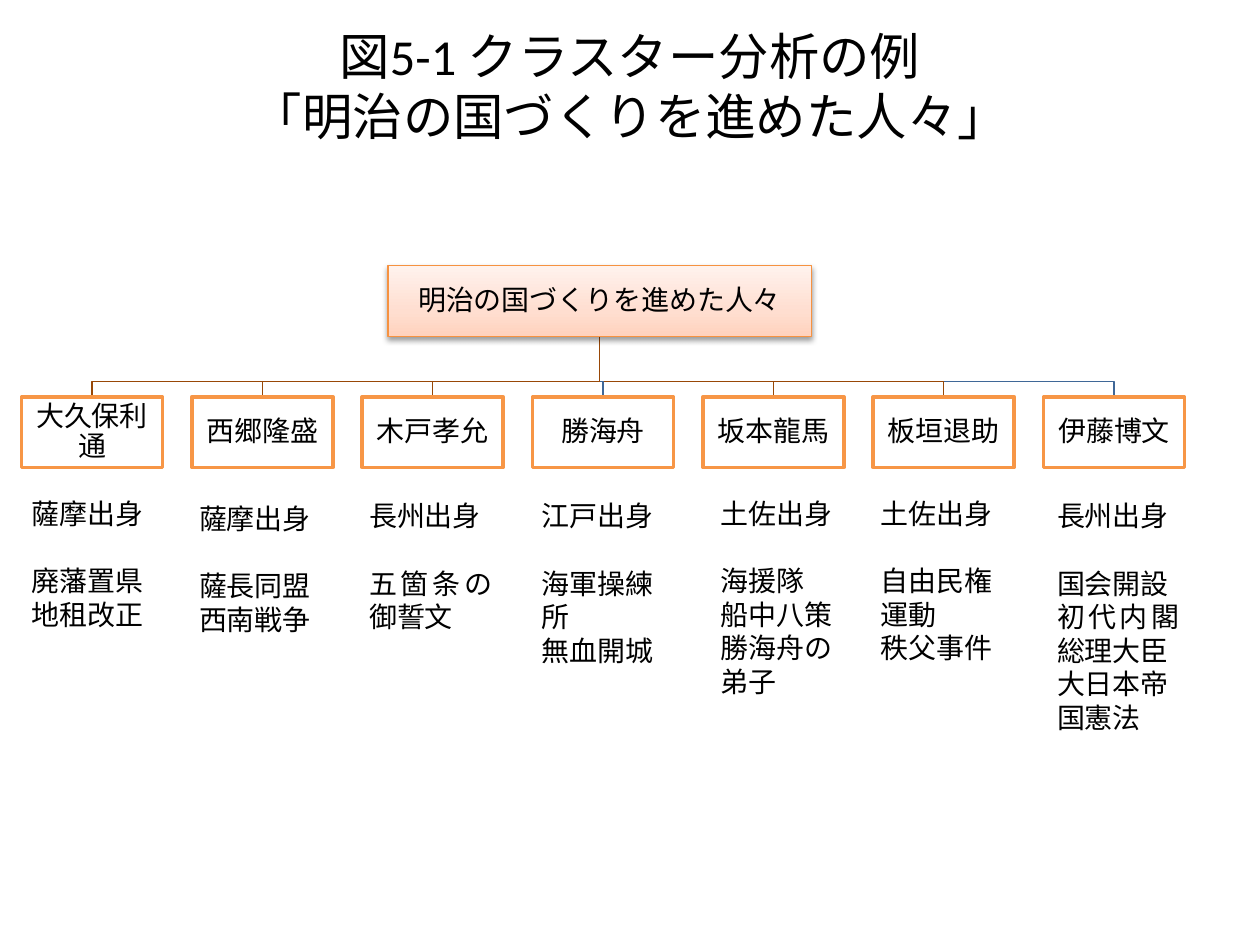
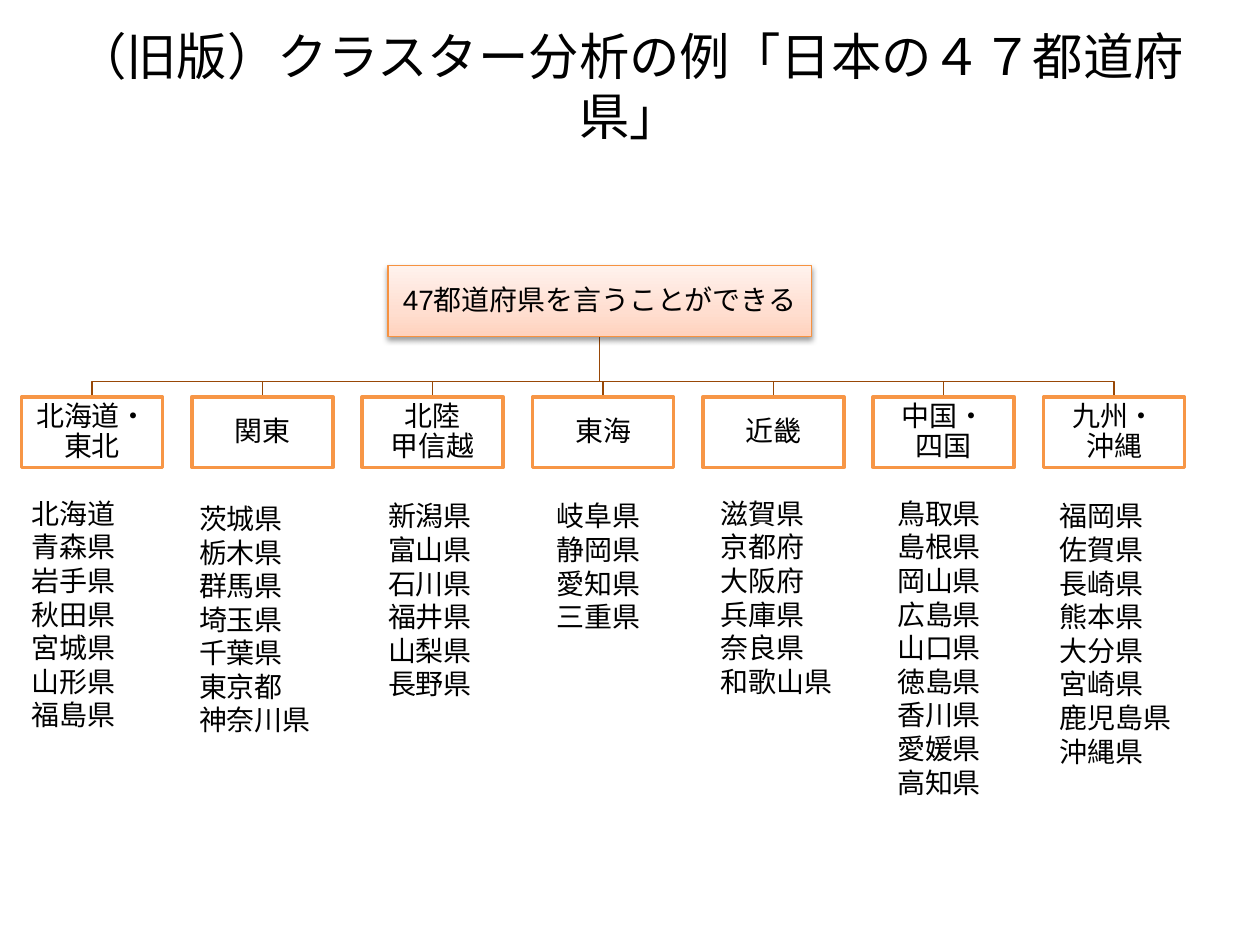
"""Build two cluster-analysis slides, each a root box over seven branches with details."""
import copy

import lxml.etree
import pptx
import pptx.dml.color
import pptx.enum.shapes
import pptx.enum.text
import pptx.oxml.ns
import pptx.util

Inches = pptx.util.Inches
Pt = pptx.util.Pt
RGBColor = pptx.dml.color.RGBColor
ALIGN = pptx.enum.text.PP_ALIGN
ANCHOR = pptx.enum.text.MSO_ANCHOR
RECTANGLE = pptx.enum.shapes.MSO_SHAPE.RECTANGLE
qn = pptx.oxml.ns.qn

BLACK = RGBColor(0x00, 0x00, 0x00)
WHITE = RGBColor(0xFF, 0xFF, 0xFF)
ORANGE = RGBColor(0xF7, 0x96, 0x46)
ROOT_BORDER = RGBColor(0xF6, 0x92, 0x40)
BROWN = RGBColor(0x98, 0x48, 0x07)
BLUE = RGBColor(0x3F, 0x67, 0x97)
ROOT_GRADIENT = [
    (0, RGBColor(0xFF, 0xD2, 0xBD)),
    (0.35, RGBColor(0xFF, 0xDE, 0xD0)),
    (1, RGBColor(0xFF, 0xF2, 0xED)),
]

BRANCH_LEFT, BRANCH_STEP, BRANCH_TOP, BRANCH_WIDTH = 0.17, 1.352, 3.15, 1.12
ROOT_LEFT, ROOT_TOP, ROOT_WIDTH = 3.08, 2.11, 3.36
BOX_HEIGHT = 0.56
TRUNK_X, FORK_Y = ROOT_LEFT + ROOT_WIDTH / 2, 3.03
DETAIL_TOPS = [3.93, 3.97, 3.95, 3.95, 3.93, 3.93, 3.95]
DETAIL_HEIGHT = 2.29
LEFT_ALIGNED = {"江戸出身", "海軍操練所", "無血開城", "勝海舟の弟子", "自由民権運動", "大日本帝国憲法"}

SLIDES = [
    {
        "title": "図5-1 クラスター分析の例\v「明治の国づくりを進めた人々」",
        "root": "明治の国づくりを進めた人々",
        "gap_after_first": 19.2,
        "blue_branches": {3, 6},
        "branches": [
            ("大久保利通", 0.17, 1.08, "薩摩出身 廃藩置県 地租改正"),
            ("西郷隆盛", 1.5, 1.12, "薩摩出身 薩長同盟 西南戦争"),
            ("木戸孝允", 2.85, 1.14, "長州出身 五箇条の御誓文"),
            ("勝海舟", 4.22, 1.08, "江戸出身 海軍操練所 無血開城"),
            ("坂本龍馬", 5.64, 1.19, "土佐出身 海援隊 船中八策 勝海舟の弟子"),
            ("板垣退助", 6.91, 1.15, "土佐出身 自由民権運動 秩父事件"),
            ("伊藤博文", 8.31, 1.13, "長州出身 国会開設 初代内閣総理大臣 大日本帝国憲法"),
        ],
    },
    {
        "title": "（旧版）クラスター分析の例「日本の４７都道府県」",
        "root": "47都道府県を言うことができる",
        "gap_after_first": 0,
        "blue_branches": set(),
        "branches": [
            ("北海道・\v東北", 0.17, 1.08, "北海道 青森県 岩手県 秋田県 宮城県 山形県 福島県"),
            ("関東", 1.5, 1.12, "茨城県 栃木県 群馬県 埼玉県 千葉県 東京都 神奈川県"),
            ("北陸\v甲信越", 3, 0.95, "新潟県 富山県 石川県 福井県 山梨県 長野県"),
            ("東海", 4.34, 0.95, "岐阜県 静岡県 愛知県 三重県"),
            ("近畿", 5.64, 1.19, "滋賀県 京都府 大阪府 兵庫県 奈良県 和歌山県"),
            ("中国・\v四国", 7.04, 0.95, "鳥取県 島根県 岡山県 広島県 山口県 徳島県 香川県 愛媛県 高知県"),
            ("九州・\v沖縄", 8.33, 1.13, "福岡県 佐賀県 長崎県 熊本県 大分県 宮崎県 鹿児島県 沖縄県"),
        ],
    },
]


def write_lines(shape, lines, alignment, anchor, margins, font_name="Arial", size=16):
    """Fill a shape with one formatted paragraph per line."""
    frame = shape.text_frame
    frame.word_wrap = True
    frame.vertical_anchor = anchor
    frame.margin_left = frame.margin_right = Inches(margins[0])
    frame.margin_top = frame.margin_bottom = Inches(margins[1])
    for index, line in enumerate(lines):
        paragraph = frame.add_paragraph() if index else frame.paragraphs[0]
        paragraph.text = line
        paragraph.alignment = ALIGN.LEFT if line in LEFT_ALIGNED else alignment
        for run in paragraph.runs:
            run.font.name = font_name
            run.font.size = Pt(size)
            run.font.color.rgb = BLACK


def add_box(slide, left, top, width, height, border=None, border_width=0):
    """Add a white rectangle without a shadow, bordered if a colour is given."""
    box = slide.shapes.add_shape(RECTANGLE, Inches(left), Inches(top), Inches(width), Inches(height))
    box.shadow.inherit = False
    box.fill.solid()
    box.fill.fore_color.rgb = WHITE
    if border is None:
        box.line.fill.background()
    else:
        box.line.color.rgb = border
        box.line.width = Pt(border_width)
    return box


presentation = pptx.Presentation()
presentation.slide_width = Inches(10)
presentation.slide_height = Inches(7.5)

for content in SLIDES:
    slide = presentation.slides.add_slide(presentation.slide_layouts[6])

    title = slide.shapes.add_textbox(Inches(0.5), Inches(0.27), Inches(9), Inches(0.81))
    write_lines(title, [content["title"]], ALIGN.CENTER, ANCHOR.MIDDLE, (0.1, 0.05), "Calibri", 28.8)

    for (name, left, width, details), top in zip(content["branches"], DETAIL_TOPS):
        detail_box = add_box(slide, left, top, width, DETAIL_HEIGHT)
        write_lines(detail_box, details.split(), ALIGN.JUSTIFY, ANCHOR.TOP, (0.08, 0.01))
        detail_box.text_frame.paragraphs[0].space_after = Pt(content["gap_after_first"])

    for index in reversed(range(len(content["branches"]))):
        branch_x = BRANCH_LEFT + index * BRANCH_STEP + BRANCH_WIDTH / 2
        builder = slide.shapes.build_freeform(Inches(TRUNK_X), Inches(ROOT_TOP + BOX_HEIGHT))
        corners = [(TRUNK_X, FORK_Y), (branch_x, FORK_Y), (branch_x, BRANCH_TOP)]
        builder.add_line_segments([(Inches(x), Inches(y)) for x, y in corners], close=False)
        branch_line = builder.convert_to_shape()
        branch_line.shadow.inherit = False
        branch_line.fill.background()
        branch_line.line.color.rgb = BLUE if index in content["blue_branches"] else BROWN
        branch_line.line.width = Pt(0.75)

    root_box = add_box(slide, ROOT_LEFT, ROOT_TOP, ROOT_WIDTH, BOX_HEIGHT, ROOT_BORDER, 0.75)
    root_box.fill.gradient()
    root_box.fill.gradient_angle = 90
    stop_list = root_box.element.spPr.find(".//" + qn("a:gsLst"))
    stop_list.append(copy.deepcopy(stop_list[0]))
    for stop, (position, color) in zip(root_box.fill.gradient_stops, ROOT_GRADIENT):
        stop.position = position
        stop.color.rgb = color
    effects = root_box.element.spPr.find(qn("a:effectLst"))
    shadow = lxml.etree.SubElement(
        effects, qn("a:outerShdw"), blurRad="40000", dist="20000", dir="5400000", rotWithShape="0")
    shadow_color = lxml.etree.SubElement(shadow, qn("a:srgbClr"), val="000000")
    lxml.etree.SubElement(shadow_color, qn("a:alpha"), val="38000")
    write_lines(root_box, [content["root"]], ALIGN.CENTER, ANCHOR.MIDDLE, (0.01, 0.01))
    root_box.text_frame.paragraphs[0].line_spacing = 0.9

    for index, branch in enumerate(content["branches"]):
        left = BRANCH_LEFT + index * BRANCH_STEP
        branch_box = add_box(slide, left, BRANCH_TOP, BRANCH_WIDTH, BOX_HEIGHT, ORANGE, 2)
        write_lines(branch_box, [branch[0]], ALIGN.CENTER, ANCHOR.MIDDLE, (0.01, 0.01))
        branch_box.text_frame.paragraphs[0].line_spacing = 0.9

presentation.save("out.pptx")
